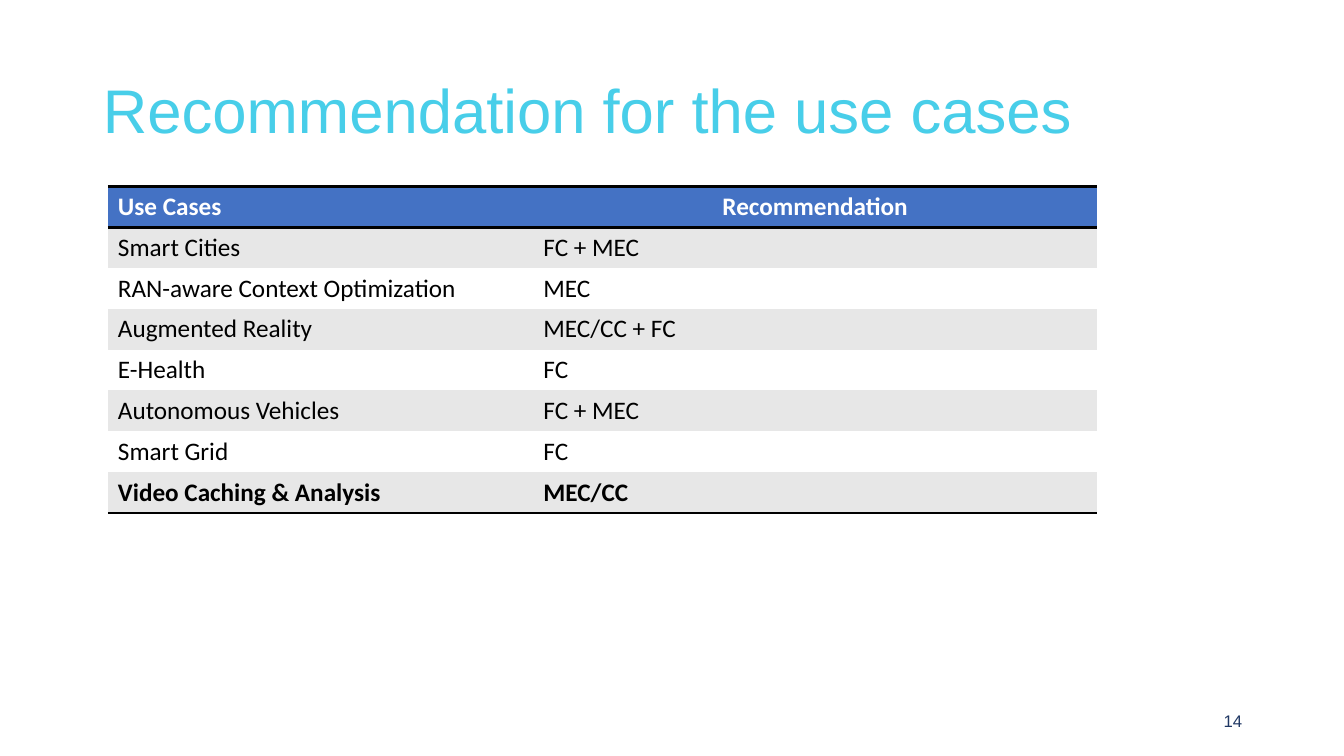
from lxml import etree
from pptx import Presentation
from pptx.dml.color import RGBColor
from pptx.enum.text import MSO_ANCHOR, PP_ALIGN
from pptx.oxml.ns import qn
from pptx.util import Inches, Pt

LEFT, MID, RIGHT = PP_ALIGN.LEFT, PP_ALIGN.CENTER, PP_ALIGN.RIGHT
CENTER = MSO_ANCHOR.MIDDLE

# Content
TITLE = "Recommendation for the use cases"
PAGE = "14"
ROWS = [
    ("Use Cases", "Recommendation"),
    ("Smart Cities", "FC + MEC"),
    ("RAN-aware Context Optimization", "MEC"),
    ("Augmented Reality", "MEC/CC + FC"),
    ("E-Health", "FC"),
    ("Autonomous Vehicles", "FC + MEC"),
    ("Smart Grid", "FC"),
    ("Video Caching & Analysis", "MEC/CC"),
]
COLORS = {"title": "48CEE9", "page": "203864", "head": "4472C4",
          "band": "E7E7E7", "white": "FFFFFF", "black": "000000"}
WIDTHS = (4.22, 5.59)
ROW_H = 0.405
PLAIN_STYLE = "{2D5ABB26-0587-4C30-8999-92F81FD0307C}"


def write(frame, text, size, font, color, bold=False, align=LEFT):
    par = frame.paragraphs[0]
    par.alignment = align
    run = par.add_run()
    run.text = text
    run.font.size = Pt(size)
    run.font.name = font
    run.font.bold = bold
    run.font.color.rgb = RGBColor.from_string(COLORS[color])
    return par


def rule(cell, side):
    """Draw a black 2 pt border on one side of a cell."""
    props = cell._tc.get_or_add_tcPr()
    line = etree.SubElement(props, qn("a:" + side), w=str(Pt(2)))
    fill = etree.SubElement(line, qn("a:solidFill"))
    etree.SubElement(fill, qn("a:srgbClr"), val=COLORS["black"])


def place(shape, left, top, width, height):
    shape.left, shape.top = Inches(left), Inches(top)
    shape.width, shape.height = Inches(width), Inches(height)


def add_grid(slide):
    last = len(ROWS) - 1
    frame = slide.shapes.add_table(
        len(ROWS), len(WIDTHS), Inches(1.07), Inches(1.85),
        Inches(sum(WIDTHS)), Inches(ROW_H * len(ROWS)))
    grid = frame.table
    grid.first_row = grid.horz_banding = False
    grid._tbl.tblPr.find(qn("a:tableStyleId")).text = PLAIN_STYLE
    for col, width in zip(grid.columns, WIDTHS):
        col.width = Inches(width)

    for r, texts in enumerate(ROWS):
        grid.rows[r].height = Inches(ROW_H)
        head = r == 0
        shade = "head" if head else "band" if r % 2 else "white"
        for c, text in enumerate(texts):
            cell = grid.cell(r, c)
            # Borders come before the fill in the cell properties
            if head:
                rule(cell, "lnT")
            if r in (0, last):
                rule(cell, "lnB")
            cell.fill.solid()
            cell.fill.fore_color.rgb = RGBColor.from_string(COLORS[shade])
            write(cell.text_frame, text, 18, "Calibri",
                  "white" if head else "black", r in (0, last),
                  MID if head and c == 1 else LEFT)


def main():
    deck = Presentation()
    deck.slide_width, deck.slide_height = Inches(13.33), Inches(7.5)
    slide = deck.slides.add_slide(deck.slide_layouts[5])

    # Title
    title = slide.shapes.title
    place(title, 0.92, 0.4, 11.5, 1.45)
    title.text_frame.vertical_anchor = CENTER
    par = write(title.text_frame, TITLE, 44, "Arial", "title")
    par.line_spacing = 0.9

    # Page number
    page = slide.shapes.add_textbox(0, 0, 0, 0)
    place(page, 9.42, 6.95, 3, 0.4)
    page.text_frame.word_wrap = True
    page.text_frame.vertical_anchor = CENTER
    write(page.text_frame, PAGE, 12, "Arial", "page", align=RIGHT)

    # Table of use cases
    add_grid(slide)
    deck.save("out.pptx")


if __name__ == "__main__":
    main()
